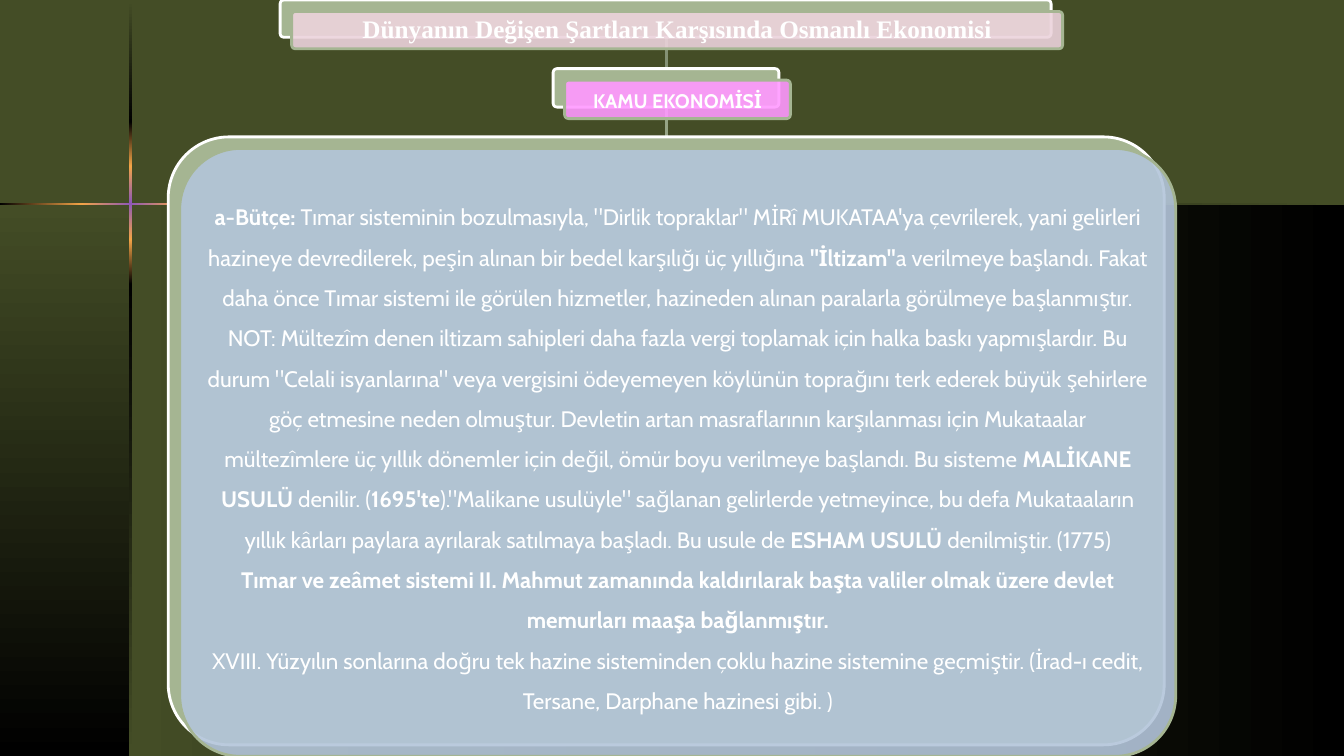
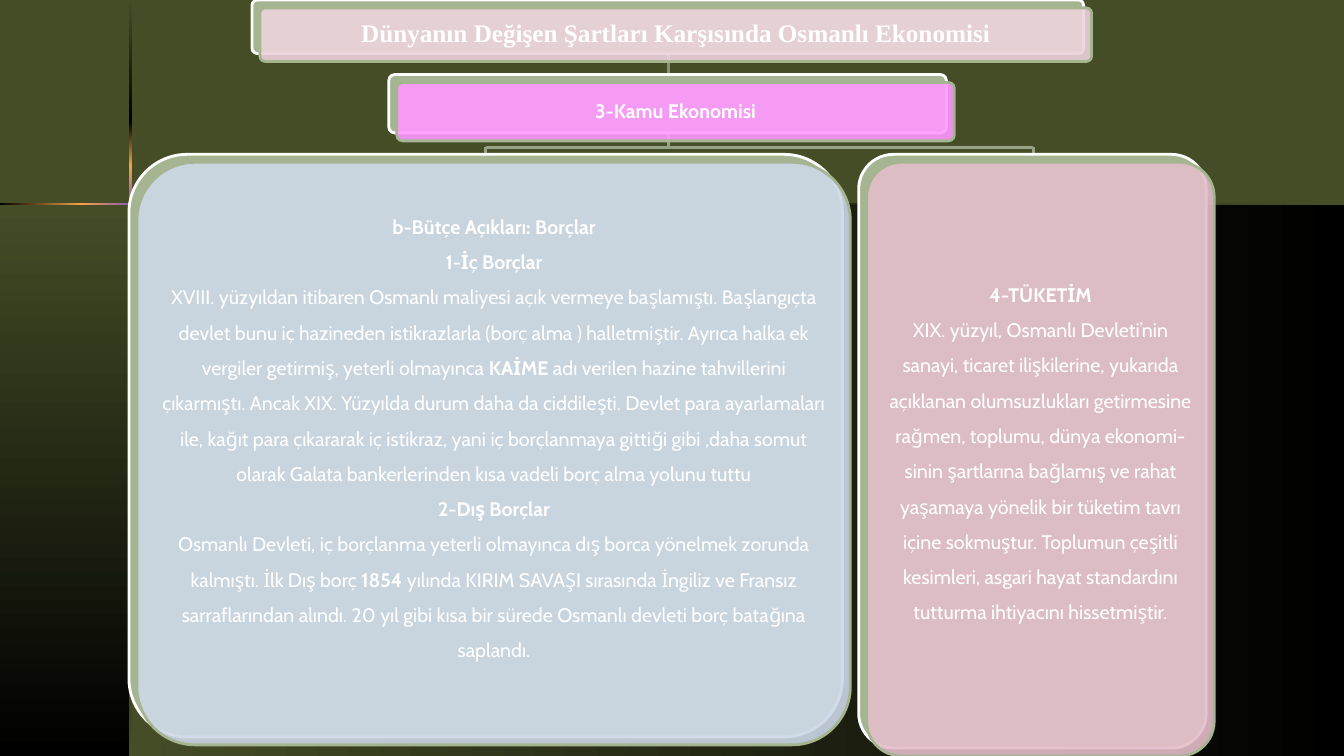
from dataclasses import dataclass

from lxml import etree
from pptx import Presentation
from pptx.dml.color import RGBColor
from pptx.enum.shapes import MSO_CONNECTOR, MSO_SHAPE
from pptx.enum.text import MSO_ANCHOR, MSO_AUTO_SIZE, PP_ALIGN
from pptx.oxml import parse_xml
from pptx.oxml.ns import nsdecls, qn
from pptx.util import Cm, Pt

RECTANGLE = MSO_SHAPE.RECTANGLE
ROUNDED = MSO_SHAPE.ROUNDED_RECTANGLE
STRAIGHT = MSO_CONNECTOR.STRAIGHT
MIDDLE = MSO_ANCHOR.MIDDLE
CENTER = PP_ALIGN.CENTER
NO_FIT = MSO_AUTO_SIZE.NONE

COLORS = {
    "olive": "444D26",
    "black": "000000",
    "amber": "F3A447",
    "violet": "8E58B6",
    "sage": "A5B592",
    "white": "FFFFFF",
    "blush": "ECD3DC",
    "pink": "FF99FF",
    "steel": "B3C5DA",
    "ice": "CCD8E7",
    "rose": "E3BECA",
    "branch": "96A485",
    "trunk": "849175",
}
HEADING_FONT = "Times New Roman"
BODY_FONT = "Cabin"
HEADING = "Dünyanın Değişen Şartları Karşısında Osmanlı Ekonomisi"
GLOW = ("amber", "violet", "amber")


@dataclass(frozen=True)
class Box:
    left: float
    top: float
    width: float
    height: float

    def lengths(self):
        return Cm(self.left), Cm(self.top), Cm(self.width), Cm(self.height)


@dataclass(frozen=True)
class Strip:
    box: Box
    stops: tuple[str, ...]
    angle: int


@dataclass(frozen=True)
class Link:
    x1: float
    y1: float
    x2: float
    y2: float
    color: str


@dataclass(frozen=True)
class TextStyle:
    font: str
    size: int
    spacing: float
    margin: float = 0
    bold: bool = False


@dataclass(frozen=True)
class Card:
    box: Box
    face: str


@dataclass(frozen=True)
class Topic:
    card: Card
    text_box: Box
    style: TextStyle
    paragraphs: tuple[str, ...]


@dataclass(frozen=True)
class Page:
    layout: int
    offset: float
    heading: Card
    section: Card
    section_text: str
    section_drop: float
    links: tuple[Link, ...]
    topics: tuple[Topic, ...]


HEADING_STYLE = TextStyle(HEADING_FONT, 18, 0.9, bold=True)
SECTION_STYLE = TextStyle(BODY_FONT, 14, 0.9, bold=True)
BUDGET_STYLE = TextStyle(BODY_FONT, 16, 1.5, 0.18)
DEBT_STYLE = TextStyle(BODY_FONT, 14, 1.5, 0.15)

STRIPS = (
    Strip(Box(3.28, 5.13, 30.59, 13.92), ("olive", "black"), 0),
    Strip(Box(0, 5.13, 3.28, 13.92), ("olive", "black"), 90),
    Strip(Box(3.25, 0.03, 0.08, 3.04), ("olive", "black"), 90),
    Strip(Box(3.25, 7.16, 0.08, 11.89), ("black", "olive"), 90),
    Strip(Box(6, 5.11, 27.87, 0.05), ("black", "olive"), 0),
    Strip(Box(3.25, 6.04, 0.08, 1.12), ("amber", "black"), 90),
    Strip(Box(3.25, 3.07, 0.08, 1.12), ("black", "amber"), 90),
    Strip(Box(3.25, 4.19, 0.08, 1.85), GLOW, 90),
    Strip(Box(0, 5.11, 2.06, 0.05), ("black", "amber"), 0),
    Strip(Box(2.06, 5.11, 2.46, 0.05), GLOW, 0),
)

BUDGET_TEXT = (
    "*a-Bütçe: *Tımar sisteminin bozulmasıyla, \"Dirlik topraklar\" MİRî MUKATAA'ya "
    "çevrilerek, yani gelirleri hazineye devredilerek, peşin alınan bir bedel karşılığı "
    "üç yıllığına *\"İltizam\"*a verilmeye başlandı. Fakat daha önce Tımar sistemi ile "
    "görülen hizmetler, hazineden alınan paralarla görülmeye başlanmıştır.",
    "NOT: Mültezîm denen iltizam sahipleri daha fazla vergi toplamak için halka baskı "
    "yapmışlardır. Bu durum \"Celali isyanlarına\" veya vergisini ödeyemeyen köylünün "
    "toprağını terk ederek büyük şehirlere göç etmesine neden olmuştur. Devletin artan "
    "masraflarının karşılanması için Mukataalar mültezîmlere üç yıllık dönemler için "
    "değil, ömür boyu verilmeye başlandı. Bu sisteme *MALİKANE USULÜ *denilir. "
    "(*1695'te*).\"Malikane usulüyle\" sağlanan gelirlerde yetmeyince, bu defa "
    "Mukataaların yıllık kârları paylara ayrılarak satılmaya başladı. Bu usule de "
    "*ESHAM USULÜ *denilmiştir. (1775)",
    "*Tımar ve zeâmet sistemi II. Mahmut zamanında kaldırılarak başta valiler olmak "
    "üzere devlet memurları maaşa bağlanmıştır.*",
    "XVIII. Yüzyılın sonlarına doğru tek hazine sisteminden çoklu hazine sistemine "
    "geçmiştir. (İrad-ı cedit, Tersane, Darphane hazinesi gibi. )",
)
DEBT_TEXT = (
    "*b-Bütçe Açıkları: Borçlar*",
    "*1-İç Borçlar*",
    "XVIII. yüzyıldan itibaren Osmanlı maliyesi açık vermeye başlamıştı. Başlangıçta "
    "devlet bunu iç hazineden istikrazlarla (borç alma ) halletmiştir. Ayrıca halka ek "
    "vergiler getirmiş, yeterli olmayınca *KAİME *adı verilen hazine tahvillerini "
    "çıkarmıştı. Ancak XIX. Yüzyılda durum daha da ciddileşti. Devlet para ayarlamaları "
    "ile, kağıt para çıkararak iç istikraz, yani iç borçlanmaya gittiği gibi ,daha somut "
    "olarak Galata bankerlerinden kısa vadeli borç alma yolunu tuttu",
    "*2-Dış Borçlar*",
    "Osmanlı Devleti, iç borçlanma yeterli olmayınca dış borca yönelmek zorunda "
    "kalmıştı. İlk Dış borç *1854 *yılında KIRIM SAVAŞI sırasında İngiliz ve Fransız "
    "sarraflarından alındı. 20 yıl gibi kısa bir sürede Osmanlı devleti borç batağına "
    "saplandı.",
)
CONSUMPTION_TEXT = (
    "*4-TÜKETİM*",
    "XIX. yüzyıl, Osmanlı Devleti’nin sanayi, ticaret ilişkilerine, yukarıda açıklanan "
    "olumsuzlukları getirmesine rağmen, toplumu, dünya ekonomi-sinin şartlarına bağlamış "
    "ve rahat yaşamaya yönelik bir tüketim tavrı içine sokmuştur. Toplumun çeşitli "
    "kesimleri, asgari hayat standardını tutturma ihtiyacını hissetmiştir.",
)

PAGES = (
    Page(
        layout=1,
        offset=0.29,
        heading=Card(Box(7.06, 0, 19.43, 0.94), "blush"),
        section=Card(Box(13.94, 1.73, 5.69, 0.97), "pink"),
        section_text="KAMU EKONOMİSİ",
        section_drop=0.16,
        links=(
            Link(16.79, 2.7, 16.79, 3.45, "branch"),
            Link(16.79, 0.94, 16.79, 1.73, "trunk"),
        ),
        topics=(
            Topic(Card(Box(4.24, 3.45, 25.1, 15.32), "steel"),
                  Box(4.98, 4.19, 24.21, 14.4), BUDGET_STYLE, BUDGET_TEXT),
        ),
    ),
    Page(
        layout=3,
        offset=0.2,
        heading=Card(Box(6.35, 0, 20.96, 1.35), "blush"),
        section=Card(Box(9.8, 1.88, 14.05, 1.47), "pink"),
        section_text="3-Kamu Ekonomisi",
        section_drop=0,
        links=(
            Link(16.84, 3.35, 16.84, 3.71, "branch"),
            Link(12.24, 3.71, 26.04, 3.71, "branch"),
            Link(12.24, 3.71, 12.24, 3.89, "branch"),
            Link(26.04, 3.71, 26.04, 3.89, "branch"),
            Link(16.84, 1.35, 16.84, 1.88, "trunk"),
        ),
        topics=(
            Topic(Card(Box(3.25, 3.89, 17.98, 14.68), "ice"),
                  Box(3.89, 4.52, 17.12, 12.75), DEBT_STYLE, DEBT_TEXT),
            Topic(Card(Box(21.64, 3.89, 8.76, 14.96), "rose"),
                  Box(22.1, 4.34, 8.25, 13.87), DEBT_STYLE, CONSUMPTION_TEXT),
        ),
    ),
)


def rgb(name: str) -> RGBColor:
    return RGBColor.from_string(COLORS[name])


def apply(target, formats: dict) -> None:
    for attribute, value in formats.items():
        setattr(target, attribute, value)


def place(shape, box: Box) -> None:
    apply(shape, dict(zip(("left", "top", "width", "height"), box.lengths())))


def write(frame, paragraphs: tuple[str, ...], style: TextStyle, drop: float = 0) -> None:
    margin = Cm(style.margin)
    apply(frame, {
        "word_wrap": True, "auto_size": NO_FIT, "vertical_anchor": MIDDLE,
        "margin_left": margin, "margin_right": margin,
        "margin_top": margin + Cm(drop), "margin_bottom": margin,
    })
    for index, marked in enumerate(paragraphs):
        paragraph = frame.add_paragraph() if index else frame.paragraphs[0]
        apply(paragraph, {
            "alignment": CENTER, "line_spacing": style.spacing,
            "space_before": Pt(0), "space_after": Pt(0),
        })
        properties = paragraph._p.get_or_add_pPr()
        properties.set("marL", "0")
        properties.set("indent", "0")
        etree.SubElement(properties, qn("a:buNone"))
        for position, words in enumerate(marked.split("*")):
            if not words:
                continue
            run = paragraph.add_run()
            run.text = words
            apply(run.font, {
                "name": style.font, "size": Pt(style.size),
                "bold": style.bold or position % 2 == 1,
            })
            run.font.color.rgb = rgb("white")


def add_strip(slide, master, strip: Strip, number: int) -> None:
    band = slide.shapes.add_shape(RECTANGLE, *strip.box.lengths())
    band.shadow.inherit = False
    band.line.fill.background()
    band.fill.background()
    last = len(strip.stops) - 1
    stops = "".join(
        f'<a:gs pos="{100000 * index // last}"><a:srgbClr val="{COLORS[name]}"/></a:gs>'
        for index, name in enumerate(strip.stops)
    )
    gradient = parse_xml(
        f'<a:gradFill {nsdecls("a")} rotWithShape="1"><a:gsLst>{stops}</a:gsLst>'
        f'<a:lin ang="{strip.angle * 60000}" scaled="0"/></a:gradFill>'
    )
    properties = band.element.spPr
    properties.replace(properties.find(qn("a:noFill")), gradient)
    band.element.nvSpPr.cNvPr.set("id", str(100 + number))
    master.shapes.element.append(band.element)


def add_link(slide, link: Link) -> None:
    branch = slide.shapes.add_connector(
        STRAIGHT, Cm(link.x1), Cm(link.y1), Cm(link.x2), Cm(link.y2))
    branch.line.color.rgb = rgb(link.color)
    branch.line.width = Pt(2)
    etree.SubElement(branch.element.spPr, qn("a:effectLst"))


def add_plate(slide, box: Box, fill: str, outline: str):
    plate = slide.shapes.add_shape(ROUNDED, *box.lengths())
    plate.adjustments[0] = 0.1
    plate.shadow.inherit = False
    plate.fill.solid()
    plate.fill.fore_color.rgb = rgb(fill)
    plate.line.color.rgb = rgb(outline)
    plate.line.width = Pt(2)
    return plate


def add_card(slide, card: Card, offset: float):
    box = card.box
    add_plate(slide, box, "sage", "white")
    front = Box(box.left + offset, box.top + offset, box.width, box.height)
    face = add_plate(slide, front, card.face, "sage")
    tint = face.element.spPr.find(qn("a:solidFill")).find(qn("a:srgbClr"))
    etree.SubElement(tint, qn("a:alpha"), val="90000")
    return face, front


def fill_placeholder(slide, placeholder, box: Box, paragraphs: tuple[str, ...],
                     style: TextStyle) -> None:
    place(placeholder, box)
    write(placeholder.text_frame, paragraphs, style)
    slide.shapes.element.append(placeholder.element)


def build_page(slide, page: Page) -> None:
    bodies = [holder for holder in slide.placeholders
              if holder.placeholder_format.idx > 0]
    for link in page.links:
        add_link(slide, link)
    _, heading_box = add_card(slide, page.heading, page.offset)
    fill_placeholder(slide, slide.shapes.title, heading_box, (HEADING,), HEADING_STYLE)
    section, _ = add_card(slide, page.section, page.offset)
    write(section.text_frame, (page.section_text,), SECTION_STYLE, page.section_drop)
    for topic, body in zip(page.topics, bodies):
        add_card(slide, topic.card, page.offset)
        fill_placeholder(slide, body, topic.text_box, topic.paragraphs, topic.style)


def main() -> None:
    deck = Presentation()
    apply(deck, {"slide_width": Cm(33.87), "slide_height": Cm(19.05)})
    master = deck.slide_master
    master.background.fill.solid()
    master.background.fill.fore_color.rgb = rgb("olive")
    slides = [deck.slides.add_slide(deck.slide_layouts[page.layout]) for page in PAGES]
    for number, strip in enumerate(STRIPS):
        add_strip(slides[0], master, strip, number)
    for slide, page in zip(slides, PAGES):
        build_page(slide, page)
    deck.save("out.pptx")


if __name__ == "__main__":
    main()
